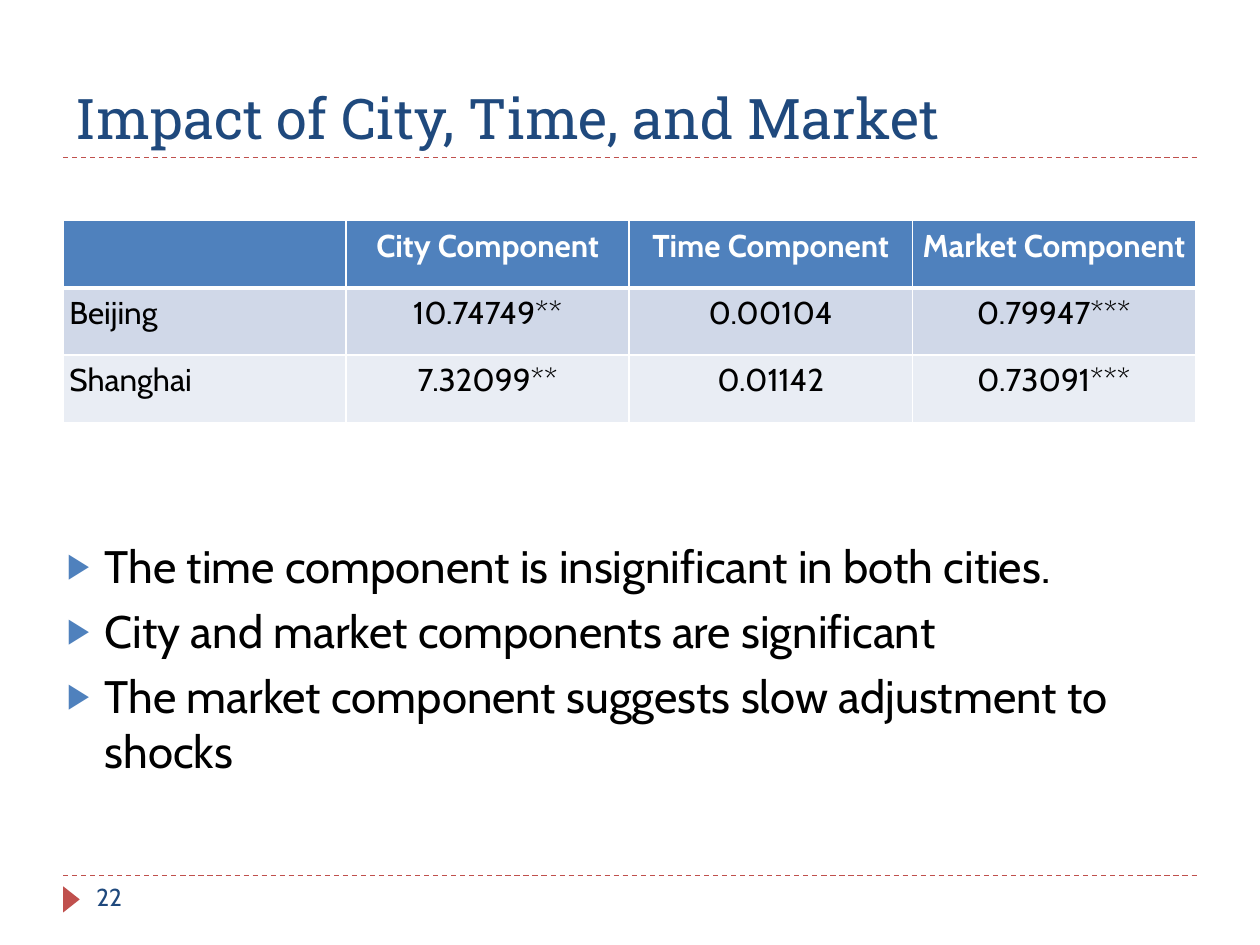
from pptx import Presentation
from pptx.dml.color import RGBColor
from pptx.enum.dml import MSO_LINE
from pptx.enum.shapes import MSO_CONNECTOR, MSO_SHAPE
from pptx.enum.text import MSO_ANCHOR, MSO_AUTO_SIZE, PP_ALIGN
from pptx.oxml.ns import qn
from pptx.util import Pt
from lxml.etree import SubElement

WHITE = RGBColor(0xFF, 0xFF, 0xFF)
BLACK = RGBColor(0x00, 0x00, 0x00)
NAVY = RGBColor(0x1F, 0x49, 0x7D)
BLUE = RGBColor(0x4F, 0x81, 0xBD)
RED = RGBColor(0xC0, 0x50, 0x4D)
BAND_DARK = RGBColor(0xD0, 0xD8, 0xE8)
BAND_LIGHT = RGBColor(0xE9, 0xED, 0xF4)

TITLE = "Impact of City, Time, and Market"
ROWS = [
    ["", "City Component", "Time Component", "Market Component"],
    ["Beijing", "10.74749**", "0.00104", "0.79947***"],
    ["Shanghai", "7.32099**", "0.01142", "0.73091***"],
]
ROW_FILLS = [BLUE, BAND_DARK, BAND_LIGHT]
FINDINGS = [
    "The time component is insignificant in both cities.",
    "City and market components are significant",
    "The market component suggests slow adjustment to shocks",
]


def write_text(paragraph, text, size=18, font="Cabin", color=BLACK,
               bold=False, align=PP_ALIGN.LEFT):
    paragraph.alignment = align
    run = paragraph.add_run()
    run.text = text
    run.font.size = Pt(size)
    run.font.name = font
    run.font.color.rgb = color
    run.font.bold = bold


def place(shape, left, top, width, height):
    shape.left, shape.top = Pt(left), Pt(top)
    shape.width, shape.height = Pt(width), Pt(height)


def add_rule(slide, left, top, width):
    rule = slide.shapes.add_connector(
        MSO_CONNECTOR.STRAIGHT, Pt(left), Pt(top), Pt(left + width), Pt(top))
    rule.line.color.rgb = RED
    rule.line.width = Pt(0.75)
    rule.line.dash_style = MSO_LINE.DASH
    SubElement(rule._element.spPr, qn("a:effectLst"))


def add_title(slide, left, top, width, height):
    title = slide.shapes.title
    place(title, left, top, width, height)
    frame = title.text_frame
    frame.auto_size = MSO_AUTO_SIZE.NONE
    frame.vertical_anchor = MSO_ANCHOR.BOTTOM
    write_text(frame.paragraphs[0], TITLE, size=32, font="Roboto Slab", color=NAVY)
    add_rule(slide, left, top + height, width)


def set_borders(cell, top, bottom):
    properties = cell._tc.get_or_add_tcPr()
    for side, width in (("L", 1), ("R", 1), ("T", top), ("B", bottom)):
        border = SubElement(properties, qn(f"a:ln{side}"), w=str(Pt(width)))
        fill = SubElement(border, qn("a:solidFill"))
        SubElement(fill, qn("a:srgbClr"), val=str(WHITE))


def add_results_table(slide, left, top, width, height):
    table = slide.shapes.add_table(
        len(ROWS), len(ROWS[0]), Pt(left), Pt(top), Pt(width), Pt(height)).table
    table.horz_banding = False
    for row_index, values in enumerate(ROWS):
        header = row_index == 0
        for column_index, value in enumerate(values):
            cell = table.cell(row_index, column_index)
            set_borders(cell, top=3 if row_index == 1 else 1, bottom=3 if header else 1)
            cell.fill.solid()
            cell.fill.fore_color.rgb = ROW_FILLS[row_index]
            cell.margin_left = cell.margin_right = Pt(3.6)
            cell.margin_top = cell.margin_bottom = Pt(3.6)
            if value:
                write_text(cell.text_frame.paragraphs[0], value, bold=header,
                           color=WHITE if header else BLACK,
                           align=PP_ALIGN.CENTER if column_index else PP_ALIGN.LEFT)


def set_bullet(paragraph, indent):
    properties = paragraph._p.get_or_add_pPr()
    properties.set("marL", str(Pt(indent)))
    properties.set("indent", str(-Pt(indent)))
    color = SubElement(properties, qn("a:buClr"))
    SubElement(color, qn("a:srgbClr"), val=str(BLUE))
    SubElement(properties, qn("a:buSzPct"), val="76000")
    SubElement(properties, qn("a:buChar"), char="▶")


def add_findings(slide, left, top, width, height):
    body = slide.placeholders[1]
    place(body, left, top, width, height)
    frame = body.text_frame
    frame.auto_size = MSO_AUTO_SIZE.NONE
    for index, finding in enumerate(FINDINGS):
        paragraph = frame.add_paragraph() if index else frame.paragraphs[0]
        paragraph.space_before = Pt(6)
        set_bullet(paragraph, 21.6)
        write_text(paragraph, finding, size=26)


def add_footer(slide, left, top, width):
    add_rule(slide, left, top, width)
    marker = slide.shapes.add_shape(
        MSO_SHAPE.ISOSCELES_TRIANGLE, Pt(left - 2.7), Pt(top + 8.8), Pt(15), Pt(9.5))
    marker.rotation = 90
    marker.shadow.inherit = False
    marker.fill.solid()
    marker.fill.fore_color.rgb = RED
    marker.line.fill.background()
    number = slide.shapes.add_textbox(Pt(left + 12), Pt(top), Pt(156), Pt(28.8))
    number.text_frame.word_wrap = True
    write_text(number.text_frame.paragraphs[0], "22", size=14, color=NAVY)


def main():
    presentation = Presentation()
    presentation.slide_width, presentation.slide_height = Pt(720), Pt(540)
    slide = presentation.slides.add_slide(presentation.slide_layouts[1])
    slide.background.fill.solid()
    slide.background.fill.fore_color.rgb = WHITE
    add_title(slide, 36, 18, 648, 72)
    add_results_table(slide, 36, 126, 647.2, 115.5)
    add_findings(slide, 31, 304, 653, 178.5)
    add_footer(slide, 36, 500.4, 648)
    presentation.save("out.pptx")


if __name__ == "__main__":
    main()
